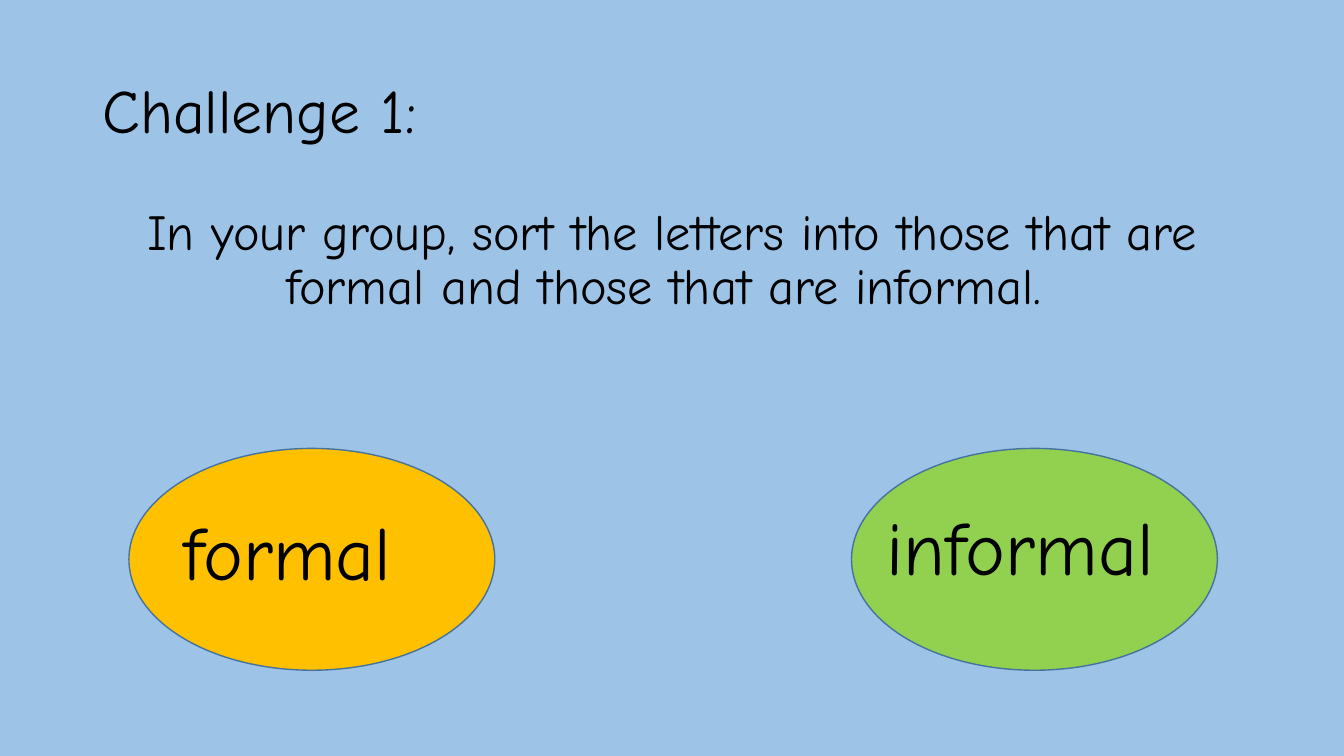
"""Build the slide that asks groups to sort letters into formal and informal."""
from dataclasses import dataclass

from pptx import Presentation
from pptx.dml.color import RGBColor
from pptx.enum.shapes import MSO_SHAPE
from pptx.enum.text import MSO_ANCHOR, PP_ALIGN
from pptx.slide import Slide
from pptx.util import Cm, Pt

OVAL = MSO_SHAPE.OVAL
TOP, MIDDLE = MSO_ANCHOR.TOP, MSO_ANCHOR.MIDDLE
LEFT, CENTER = PP_ALIGN.LEFT, PP_ALIGN.CENTER

COLORS = {
    "background": "9DC3E6",
    "text": "000000",
    "formal": "FFC000",
    "informal": "92D050",
    "outline": "43739E",
}
FONT = "Comic Neue"
OVAL_TOP, OVAL_WIDTH, OVAL_HEIGHT = 11.3, 9.22, 5.59


@dataclass
class Group:
    color: str
    left: float


@dataclass
class Caption:
    text: str
    left: float
    top: float
    width: float
    height: float
    size: int
    align: PP_ALIGN = LEFT
    anchor: MSO_ANCHOR = TOP
    space_before: int = 10


GROUPS = [Group("informal", 21.46), Group("formal", 3.25)]
CAPTIONS = [
    Caption("Challenge 1:", 2.33, 1.02, 29.21, 3.68, 44, anchor=MIDDLE, space_before=0),
    Caption(
        "In your group, sort the letters into those that are formal and those that are informal. ",
        2.33, 5.08, 29.21, 12.09, 36, align=CENTER,
    ),
    Caption("formal", 4.37, 12.85, 6.99, 2.72, 54),
    Caption("informal", 22.1, 12.73, 9.14, 2.72, 54),
]


def rgb(name: str) -> RGBColor:
    """Return the named colour."""
    return RGBColor.from_string(COLORS[name])


def apply_format(target: object, values: dict[str, object]) -> None:
    """Set each attribute of the target to its format value."""
    for attribute, value in values.items():
        setattr(target, attribute, value)


def draw_group(slide: Slide, group: Group) -> None:
    """Draw the oval that collects one group of letters."""
    oval = slide.shapes.add_shape(
        OVAL, Cm(group.left), Cm(OVAL_TOP), Cm(OVAL_WIDTH), Cm(OVAL_HEIGHT)
    )
    oval.shadow.inherit = False
    oval.fill.solid()
    oval.fill.fore_color.rgb = rgb(group.color)
    oval.line.color.rgb = rgb("outline")
    oval.line.width = Pt(1)


def draw_caption(slide: Slide, caption: Caption) -> None:
    """Write one caption in its own text box."""
    box = slide.shapes.add_textbox(
        Cm(caption.left), Cm(caption.top), Cm(caption.width), Cm(caption.height)
    )
    frame = box.text_frame
    apply_format(frame, {"word_wrap": True, "vertical_anchor": caption.anchor})
    paragraph = frame.paragraphs[0]
    apply_format(paragraph, {
        "alignment": caption.align,
        "line_spacing": 0.9,
        "space_before": Pt(caption.space_before),
    })
    run = paragraph.add_run()
    run.text = caption.text
    apply_format(run.font, {"name": FONT, "size": Pt(caption.size)})
    run.font.color.rgb = rgb("text")


def main() -> None:
    """Assemble and save the slide."""
    deck = Presentation()
    apply_format(deck, {"slide_width": Cm(33.87), "slide_height": Cm(19.05)})
    slide = deck.slides.add_slide(deck.slide_layouts[6])
    slide.background.fill.solid()
    slide.background.fill.fore_color.rgb = rgb("background")
    for group in GROUPS:
        draw_group(slide, group)
    for caption in CAPTIONS:
        draw_caption(slide, caption)
    deck.save("out.pptx")


if __name__ == "__main__":
    main()
